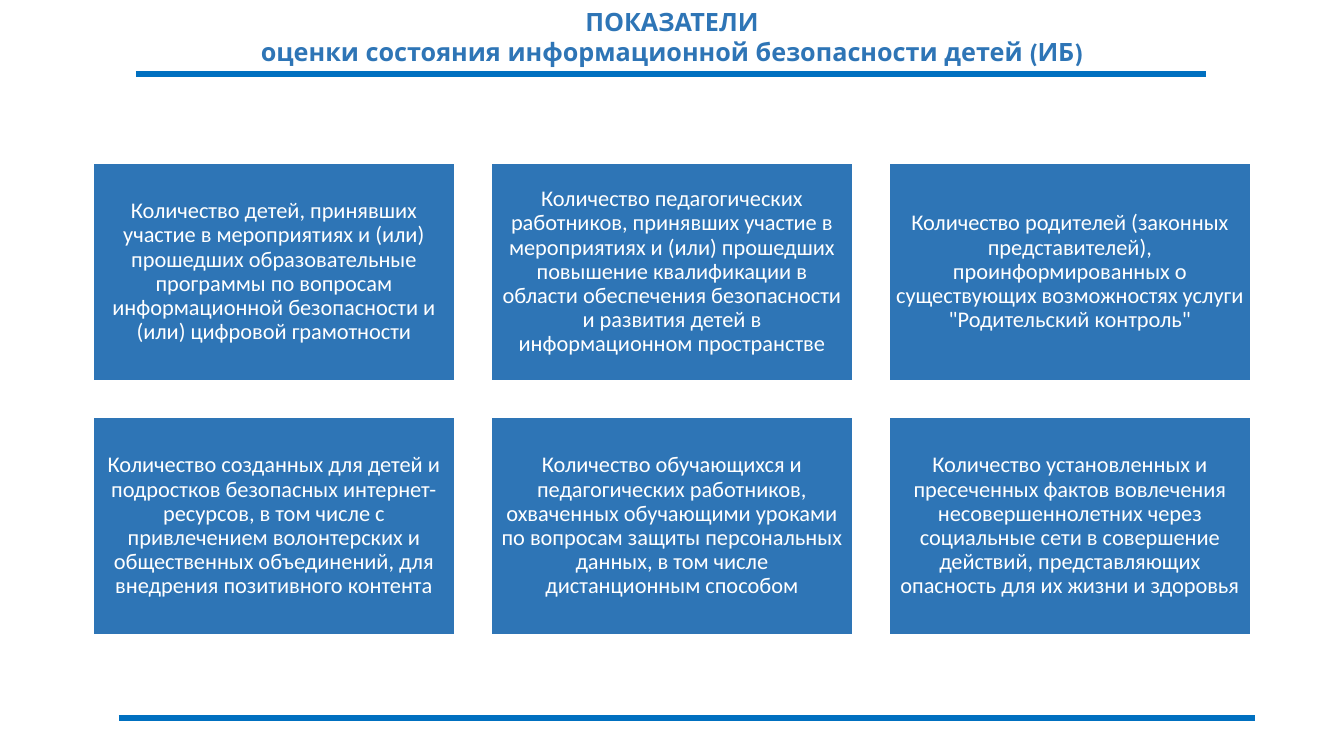
from lxml import etree
from pptx import Presentation
from pptx.dml.color import RGBColor
from pptx.enum.shapes import MSO_CONNECTOR, MSO_SHAPE
from pptx.enum.text import MSO_ANCHOR, MSO_AUTO_SIZE, PP_ALIGN
from pptx.oxml.ns import qn
from pptx.util import Pt

TITLE = [
    "ПОКАЗАТЕЛИ",
    "оценки состояния информационной безопасности детей (ИБ)",
]
INDICATORS = [
    "Количество детей, принявших участие в мероприятиях и (или) прошедших "
    "образовательные программы по вопросам информационной безопасности и "
    "(или) цифровой грамотности",
    "Количество педагогических работников, принявших участие в мероприятиях "
    "и (или) прошедших повышение квалификации в области обеспечения "
    "безопасности и развития детей в информационном пространстве",
    "Количество родителей (законных представителей), проинформированных о "
    'существующих возможностях услуги "Родительский контроль"',
    "Количество созданных для детей и подростков безопасных "
    "интернет-ресурсов, в том числе с привлечением волонтерских и "
    "общественных объединений, для внедрения позитивного контента",
    "Количество обучающихся и педагогических работников, охваченных "
    "обучающими уроками по вопросам защиты персональных данных, в том числе "
    "дистанционным способом",
    "Количество установленных и пресеченных фактов вовлечения "
    "несовершеннолетних через социальные сети в совершение действий, "
    "представляющих опасность для их жизни и здоровья",
]
RULES = [(119, 718, 1255, 718), (136, 74, 1206, 74)]

SLIDE_W, SLIDE_H = 1344, 756
TITLE_BOX = (7, 1, 1330, 72)
COLS = 3
CARD_X, CARD_Y, CARD_W, CARD_H = 93, 163, 362, 218
STEP_X, STEP_Y = 398, 254
INSET = 7

BLUE = RGBColor(0x2E, 0x75, 0xB6)
RULE_BLUE = RGBColor(0x00, 0x70, 0xC0)
WHITE = RGBColor(0xFF, 0xFF, 0xFF)

CENTER = PP_ALIGN.CENTER
TOP, MIDDLE = MSO_ANCHOR.TOP, MSO_ANCHOR.MIDDLE
NO_FIT = MSO_AUTO_SIZE.NONE
STRAIGHT = MSO_CONNECTOR.STRAIGHT
RECT = MSO_SHAPE.RECTANGLE


def px(*lengths):
    return [round(n * 914400 / 100.8) for n in lengths]


def style(p, font, size, color, bold=False):
    p.alignment = CENTER
    p.font.name = font
    p.font.size = Pt(size)
    p.font.bold = bold
    p.font.color.rgb = color


def add_rule(s, ends):
    line = s.shapes.add_connector(STRAIGHT, *px(*ends))
    line.line.color.rgb = RULE_BLUE
    line.line.width = Pt(4)
    etree.SubElement(line._element.spPr, qn("a:effectLst"))


def add_title(s):
    sp = s.shapes.title
    sp.left, sp.top, sp.width, sp.height = px(*TITLE_BOX)
    tf = sp.text_frame
    tf.text = "\n".join(TITLE)
    tf.word_wrap = True
    tf.auto_size = NO_FIT
    tf.vertical_anchor = TOP
    for p in tf.paragraphs:
        style(p, "League Spartan", 18, BLUE, True)


def add_card(s, i, text):
    row, col = divmod(i, COLS)
    x, y = CARD_X + col * STEP_X, CARD_Y + row * STEP_Y
    sp = s.shapes.add_shape(RECT, *px(x, y, CARD_W, CARD_H))
    sp.shadow.inherit = False
    sp.fill.solid()
    sp.fill.fore_color.rgb = BLUE
    sp.line.color.rgb = WHITE
    sp.line.width = Pt(1)
    tf = sp.text_frame
    tf.word_wrap = True
    tf.vertical_anchor = MIDDLE
    tf.margin_left, tf.margin_top, tf.margin_right, tf.margin_bottom = px(*[INSET] * 4)
    tf.text = text
    p = tf.paragraphs[0]
    p.line_spacing = 0.9
    style(p, "Calibri", 16, WHITE)


def main():
    prs = Presentation()
    prs.slide_width, prs.slide_height = px(SLIDE_W, SLIDE_H)
    s = prs.slides.add_slide(prs.slide_layouts[5])
    for ends in RULES:
        add_rule(s, ends)
    add_title(s)
    for i, text in enumerate(INDICATORS):
        add_card(s, i, text)
    prs.save("out.pptx")


if __name__ == "__main__":
    main()
